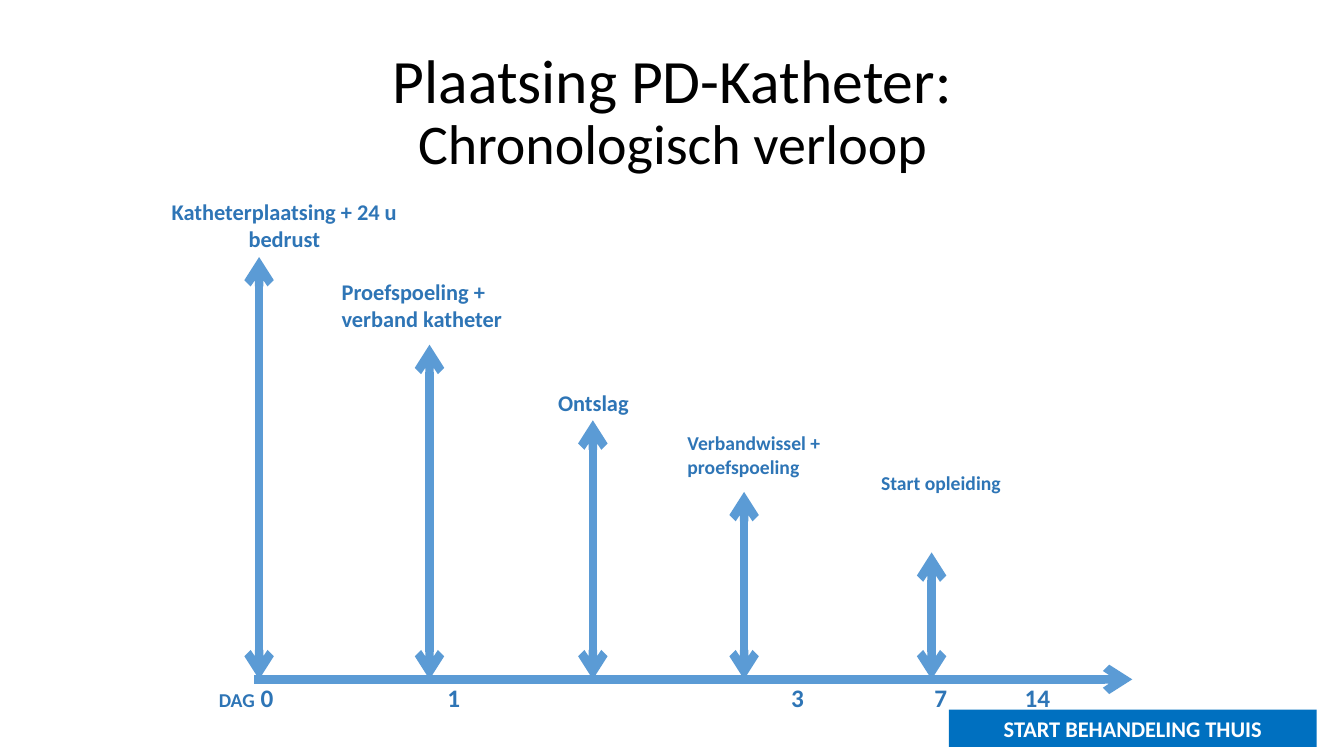
from pptx import Presentation, util as u
from pptx.dml.color import RGBColor
from pptx.enum import shapes, text
from pptx.oxml.ns import qn
from lxml import etree

BLACK = RGBColor(0, 0, 0)
WHITE = RGBColor(255, 255, 255)
INK = RGBColor(0x2E, 0x75, 0xB6)
ARROW = RGBColor(0x5B, 0x9B, 0xD5)
BLUE = RGBColor(0, 0x70, 0xC0)
LEFT, MID = text.PP_ALIGN.LEFT, text.PP_ALIGN.CENTER
TOP, MIDDLE = text.MSO_ANCHOR.TOP, text.MSO_ANCHOR.MIDDLE

AXIS = 6.74
# Arrow x, arrow top, label, label box (left, top, width, height), size, align
STEPS = [
    (2.57, 2.55, "Katheterplaatsing + 24 u bedrust", (1.33, 1.92, 2.98, 0.64), 16, MID),
    (4.26, 3.42, "Proefspoeling + verband katheter", (3.29, 2.71, 2.29, 0.64), 16, LEFT),
    (5.88, 4.17, "Ontslag", (4.94, 3.81, 1.89, 0.37), 16, MID),
    (7.38, 4.88, "Verbandwissel + proefspoeling", (6.72, 4.23, 1.9, 0.81), 14, LEFT),
    (9.24, 5.48, "Start opleiding", (8.64, 4.62, 2.68, 0.34), 14, LEFT),
]
# Day number and the middle of its place along the axis
DAYS = [("1", 4.5), ("3", 7.91), ("7", 9.33), ("14", 10.29)]


def inches(box):
    return [u.Inches(v) for v in box]


def move(shape, box):
    shape.left, shape.top, shape.width, shape.height = inches(box)


def write(shape, *parts, color=INK, bold=True, align=LEFT, anchor=TOP, space=1.0):
    """Each part is a (text, size) pair; a leading newline breaks the line."""
    frame = shape.text_frame
    frame.word_wrap = True
    frame.auto_size = text.MSO_AUTO_SIZE.NONE
    frame.vertical_anchor = anchor
    para = frame.paragraphs[0]
    para.alignment, para.line_spacing = align, space
    para.space_before = u.Pt(0)
    for words, size in parts:
        if words.startswith("\n"):
            para.add_line_break()
        run = para.add_run()
        run.text = words.lstrip("\n")
        font = run.font
        font.name, font.size, font.bold = "Calibri", u.Pt(size), bold
        font.color.rgb = color


def arrow(slide, x1, y1, x2, y2, ends):
    line = slide.shapes.add_connector(
        shapes.MSO_CONNECTOR.STRAIGHT, *inches((x1, y1, x2, y2)))
    line.line.color.rgb = ARROW
    line.line.width = u.Pt(6)
    ln = line.get_or_add_ln()
    for end in ends:
        etree.SubElement(ln, qn("a:" + end), type="arrow")
    etree.SubElement(ln.getparent(), qn("a:effectLst"))


def title(slide, box):
    head = slide.shapes.title
    move(head, box)
    write(head, ("Plaatsing PD-Katheter:", 44), ("\nChronologisch verloop", 40),
          color=BLACK, bold=False, align=MID, anchor=MIDDLE, space=0.9)


def days(slide, box):
    # Row heading with day 0, without a bullet
    body = slide.placeholders[1]
    move(body, box)
    prop = body.text_frame.paragraphs[0]._p.get_or_add_pPr()
    prop.set("marL", "0")
    prop.set("indent", "0")
    etree.SubElement(prop, qn("a:buNone"))
    write(body, ("DAG", 14), (" 0", 18), space=0.9)
    # Later days, centred on their places in the same row
    _, top, wide, high = box
    for day, x in DAYS:
        label = slide.shapes.add_textbox(*inches((x - wide / 2, top, wide, high)))
        write(label, (day, 18), align=MID, space=0.9)


def chart(slide):
    # Time axis
    arrow(slide, 2.52, AXIS, 11.23, AXIS, ["tailEnd"])
    # Steps with their labels
    for x, top, words, box, size, align in STEPS:
        arrow(slide, x, AXIS, x, top, ["headEnd", "tailEnd"])
        label = slide.shapes.add_textbox(*inches(box))
        write(label, (words, size), align=align)


def banner(slide, box):
    bar = slide.shapes.add_shape(shapes.MSO_SHAPE.RECTANGLE, *inches(box))
    bar.shadow.inherit = False
    bar.fill.solid()
    bar.fill.fore_color.rgb = BLUE
    bar.line.fill.background()
    write(bar, ("START BEHANDELING THUIS", 16), color=WHITE, align=MID, anchor=MIDDLE)


def main():
    deck = Presentation()
    deck.slide_width, deck.slide_height = u.Inches(13.33), u.Inches(7.5)
    slide = deck.slides.add_slide(deck.slide_layouts[1])
    title(slide, (0.92, 0.4, 11.5, 1.45))
    days(slide, (2.07, 6.75, 1, 0.4))
    chart(slide)
    banner(slide, (9.41, 7.04, 3.65, 0.37))
    deck.save("out.pptx")


if __name__ == "__main__":
    main()
